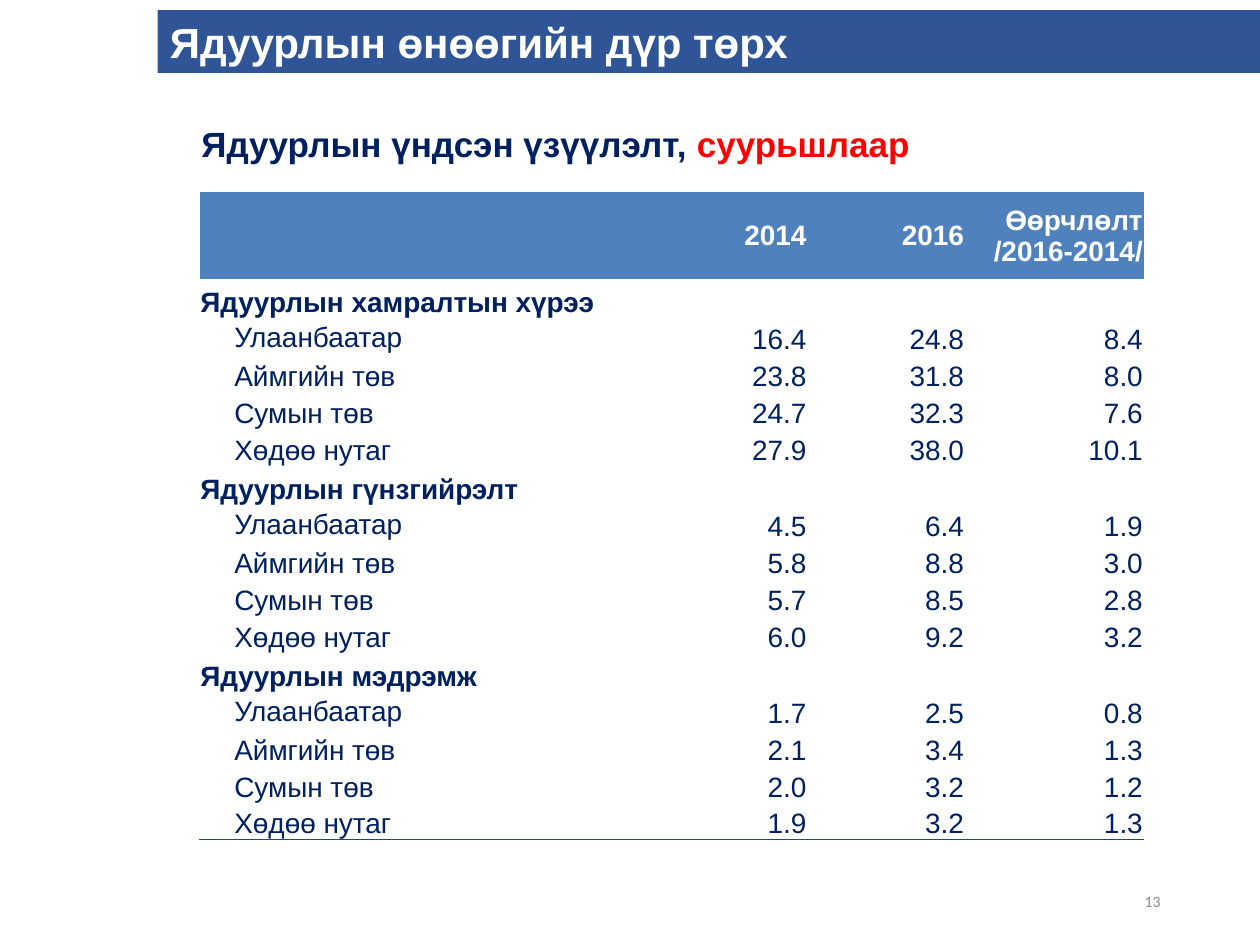
from lxml.etree import SubElement
from pptx import Presentation
from pptx.dml.color import RGBColor as Rgb
from pptx.enum.shapes import MSO_SHAPE as Preset
from pptx.enum.text import MSO_ANCHOR as Anchor, PP_ALIGN as Align
from pptx.oxml.ns import qn
from pptx.util import Inches, Pt

SLIDE_W, SLIDE_H = 10, 7.5
COLORS = {"banner": "2F5597", "header": "4F81BD", "navy": "002060", "accent": "FF0000",
          "white": "FFFFFF", "rule": "1F497D", "muted": "898989"}
PLAIN_TABLE = "{2D5ABB26-0587-4C30-8999-92F81FD0307C}"
COLUMN_SHARES = [3.5, 1.33, 1.25, 1.42]
HEADER_SHARE, GROUP_SHARE, PLACE_SHARE = 0.69, 0.31, 0.29
HEADINGS = ["", "2014", "2016", "Өөрчлөлт /2016-2014/"]
PLACES = ["Улаанбаатар", "Аймгийн төв", "Сумын төв", "Хөдөө нутаг"]
INDICATORS = {
    "Ядуурлын хамралтын хүрээ": [("16.4", "24.8", "8.4"), ("23.8", "31.8", "8.0"),
                                 ("24.7", "32.3", "7.6"), ("27.9", "38.0", "10.1")],
    "Ядуурлын гүнзгийрэлт": [("4.5", "6.4", "1.9"), ("5.8", "8.8", "3.0"),
                             ("5.7", "8.5", "2.8"), ("6.0", "9.2", "3.2")],
    "Ядуурлын мэдрэмж": [("1.7", "2.5", "0.8"), ("2.1", "3.4", "1.3"),
                         ("2.0", "3.2", "1.2"), ("1.9", "3.2", "1.3")],
}


def color(name):
    return Rgb.from_string(COLORS[name])


def add_run(paragraph, text, size, tint, bold=False, face="Arial"):
    run = paragraph.add_run()
    run.text = text
    run.font.name, run.font.size, run.font.bold = face, Pt(size), bold
    run.font.color.rgb = color(tint)


def add_banner(slide, box):
    banner = slide.shapes.add_shape(Preset.RECTANGLE, *map(Inches, box))
    banner.shadow.inherit = False
    banner.fill.solid()
    banner.fill.fore_color.rgb = color("banner")
    banner.line.fill.background()
    banner.text_frame.vertical_anchor = Anchor.TOP
    title = banner.text_frame.paragraphs[0]
    title.alignment = Align.LEFT
    add_run(title, "Ядуурлын өнөөгийн дүр төрх", 24, "white", True)


def add_subtitle(slide, box):
    frame = slide.shapes.add_textbox(*map(Inches, box)).text_frame
    frame.word_wrap = True
    subtitle = frame.paragraphs[0]
    add_run(subtitle, "Ядуурлын үндсэн үзүүлэлт, ", 20, "navy", True)
    add_run(subtitle, "суурьшлаар", 20, "accent", True)


def add_page_number(slide, box):
    frame = slide.shapes.add_textbox(*map(Inches, box)).text_frame
    frame.word_wrap = True
    frame.vertical_anchor = Anchor.MIDDLE
    frame.paragraphs[0].alignment = Align.RIGHT
    add_run(frame.paragraphs[0], "13", 9, "muted", face="Calibri")


def add_borders(cell, edges):
    properties = cell._tc.get_or_add_tcPr()
    for position, side in enumerate(side for side in "LRTB" if side in edges):
        line = SubElement(properties, qn(f"a:ln{side}"), w=str(Pt(0.5)))
        fill = SubElement(line, qn("a:solidFill"))
        SubElement(fill, qn("a:srgbClr"), val=COLORS[edges[side]])
        properties.insert(position, line)


def fill_cell(cell, text, fill, tint, bold, anchor, align, indent, edges):
    cell.fill.solid()
    cell.fill.fore_color.rgb = color(fill)
    cell.margin_left = Inches(indent)
    cell.margin_right = cell.margin_top = Inches(0.01)
    cell.margin_bottom = 0
    cell.vertical_anchor = anchor
    paragraph = cell.text_frame.paragraphs[0]
    paragraph.alignment = align
    if text:
        add_run(paragraph, text, 16, tint, bold)
    add_borders(cell, edges)


def fill_header(table):
    last = len(HEADINGS) - 1
    for column, heading in enumerate(HEADINGS):
        edges = {"T": "white", "B": "white"}
        if column in (0, last):
            edges["R" if column else "L"] = "white"
        fill_cell(table.cell(0, column), heading, "header", "white", True,
                  Anchor.MIDDLE, Align.RIGHT, 0.01, edges)


def fill_group(table, top, indicator, figures, closing):
    for column, text in enumerate([indicator, "", "", ""]):
        fill_cell(table.cell(top, column), text, "white", "navy", True,
                  Anchor.BOTTOM, Align.LEFT, 0.01, {"T": "white"})
    for index, (place, values) in enumerate(zip(PLACES, figures)):
        edges = {"B": closing} if place == PLACES[-1] else {}
        for column, text in enumerate([place, *values]):
            is_label = column == 0
            fill_cell(table.cell(top + 1 + index, column), text, "white", "navy", False,
                      Anchor.MIDDLE if is_label and index == 0 else Anchor.BOTTOM,
                      Align.LEFT if is_label else Align.RIGHT,
                      0.28 if is_label else 0.01, edges)


def add_poverty_table(slide, box):
    width, height = box[2:]
    group_shares = [GROUP_SHARE] + [PLACE_SHARE] * len(PLACES)
    row_shares = [HEADER_SHARE] + group_shares * len(INDICATORS)
    table = slide.shapes.add_table(len(row_shares), len(HEADINGS), *map(Inches, box)).table
    table.first_row = table.horz_banding = False
    table._tbl.tblPr.find(qn("a:tableStyleId")).text = PLAIN_TABLE
    for column, share in zip(table.columns, COLUMN_SHARES):
        column.width = Inches(width * share / sum(COLUMN_SHARES))
    for row, share in zip(table.rows, row_shares):
        row.height = Inches(height * share / sum(row_shares))
    fill_header(table)
    for group, (indicator, figures) in enumerate(INDICATORS.items()):
        closing = "rule" if group == len(INDICATORS) - 1 else "white"
        fill_group(table, 1 + group * len(group_shares), indicator, figures, closing)


def main():
    deck = Presentation()
    deck.slide_width, deck.slide_height = Inches(SLIDE_W), Inches(SLIDE_H)
    slide = deck.slides.add_slide(deck.slide_layouts[6])
    add_page_number(slide, (7.06, 6.95, 2.25, 0.4))
    add_banner(slide, (SLIDE_W / 8, 0.08, SLIDE_W * 7 / 8, 0.5))
    add_subtitle(slide, (1.5, 0.92, 7.33, 0.44))
    add_poverty_table(slide, (1.58, 1.52, SLIDE_W * 3 / 4, 5.15))
    deck.save("out.pptx")


if __name__ == "__main__":
    main()
